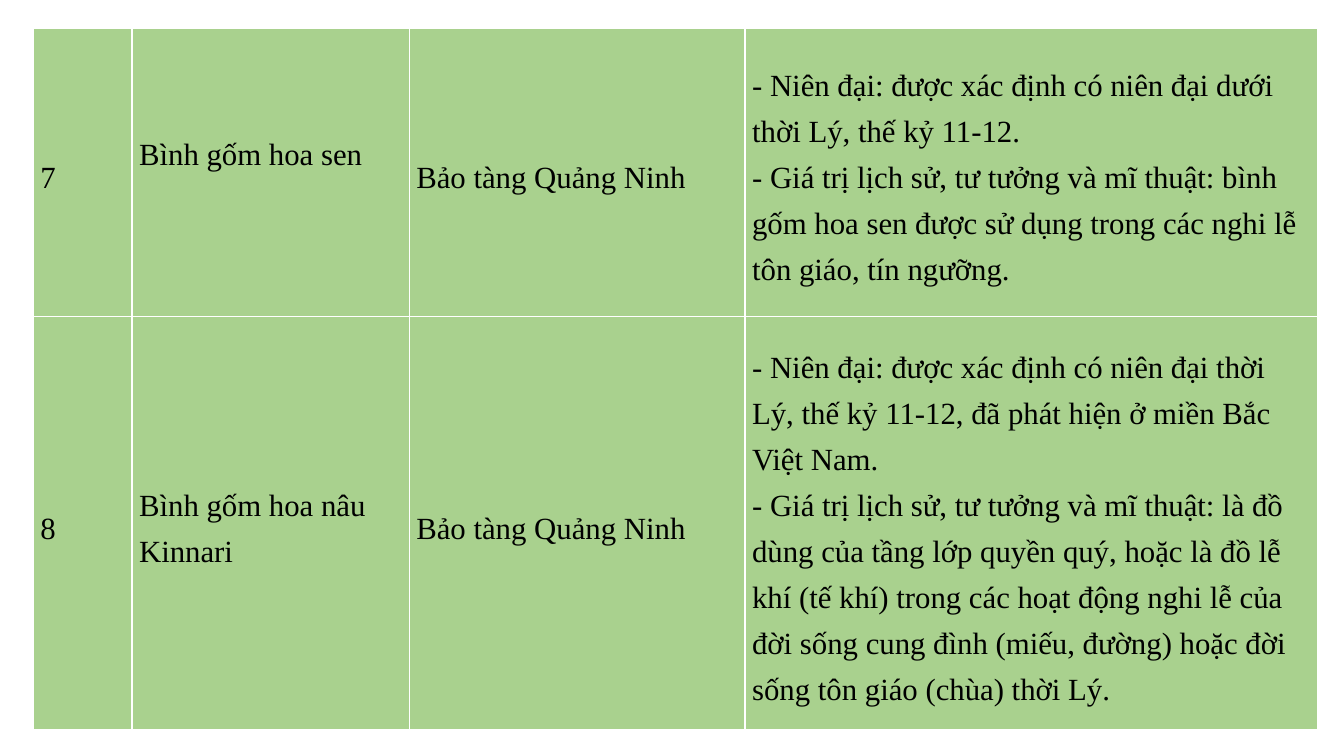
"""Build a slide with a table of two ceramic vases, their museum and their value."""
from dataclasses import dataclass

import pptx
import pptx.dml.color
import pptx.enum.text
import pptx.oxml
import pptx.oxml.ns
import pptx.presentation
import pptx.table
import pptx.util

EMU_PER_PX = 9144


@dataclass(frozen=True)
class Theme:
    font: str = "Times New Roman"
    text: str = "000000"
    cell: str = "A9D18E"
    border: str = "FFFFFF"
    text_size: int = 22
    border_width: int = 1
    line_spacing: float = 1.35


@dataclass(frozen=True)
class CellText:
    text: str
    bottom: int = 0


@dataclass(frozen=True)
class Artifact:
    height: int
    number: CellText
    name: CellText
    museum: CellText
    value: CellText

    def cells(self) -> tuple[CellText, ...]:
        return self.number, self.name, self.museum, self.value


THEME = Theme()
SLIDE_WIDTH, SLIDE_HEIGHT = 1333, 750
TABLE_LEFT, TABLE_TOP = 33, 28
COLUMN_WIDTHS = (98, 275, 333, 568)
SIDE_MARGIN = 7
MUSEUM = CellText("Bảo tàng Quảng Ninh")

ARTIFACTS = (
    Artifact(
        286,
        CellText("7"),
        CellText("Bình gốm hoa sen", bottom=45),
        MUSEUM,
        CellText(
            "- Niên đại: được xác định có niên đại dưới thời Lý, thế kỷ 11-12.\n"
            "- Giá trị lịch sử, tư tưởng và mĩ thuật: bình gốm hoa sen được sử dụng "
            "trong các nghi lễ tôn giáo, tín ngưỡng."
        ),
    ),
    Artifact(
        410,
        CellText("8"),
        CellText("Bình gốm hoa nâu Kinnari"),
        MUSEUM,
        CellText(
            "- Niên đại: được xác định có niên đại thời Lý, thế kỷ 11-12, "
            "đã phát hiện ở miền Bắc Việt Nam.\n"
            "- Giá trị lịch sử, tư tưởng và mĩ thuật: là đồ dùng của tầng lớp quyền quý, "
            "hoặc là đồ lễ khí (tế khí) trong các hoạt động nghi lễ của đời sống "
            "cung đình (miếu, đường) hoặc đời sống tôn giáo (chùa) thời Lý."
        ),
    ),
)


def px(length: int) -> pptx.util.Emu:
    return pptx.util.Emu(length * EMU_PER_PX)


def write_text(cell: pptx.table._Cell, text: str, *, size: int, color: str, bottom: int) -> None:
    cell.vertical_anchor = pptx.enum.text.MSO_ANCHOR.MIDDLE
    cell.margin_left = cell.margin_right = px(SIDE_MARGIN)
    cell.margin_top, cell.margin_bottom = px(0), px(bottom)
    cell.text_frame.text = text
    for paragraph in cell.text_frame.paragraphs:
        paragraph.line_spacing = THEME.line_spacing
        for run in paragraph.runs:
            run.font.name = THEME.font
            run.font.size = pptx.util.Pt(size)
            run.font.color.rgb = pptx.dml.color.RGBColor.from_string(color)


def paint_cell(cell: pptx.table._Cell, *, fill: str, border: str, width: int) -> None:
    properties = cell._tc.get_or_add_tcPr()
    namespace = pptx.oxml.ns.nsdecls("a")
    for side in "LRTB":
        properties.append(pptx.oxml.parse_xml(
            f'<a:ln{side} {namespace} w="{pptx.util.Pt(width)}"><a:solidFill>'
            f'<a:srgbClr val="{border}"/></a:solidFill></a:ln{side}>'
        ))
    cell.fill.solid()
    cell.fill.fore_color.rgb = pptx.dml.color.RGBColor.from_string(fill)


def add_artifact_table(presentation: pptx.presentation.Presentation) -> None:
    slide = presentation.slides.add_slide(presentation.slide_layouts[6])
    table = slide.shapes.add_table(
        len(ARTIFACTS), len(COLUMN_WIDTHS), px(TABLE_LEFT), px(TABLE_TOP),
        px(sum(COLUMN_WIDTHS)), px(sum(artifact.height for artifact in ARTIFACTS)),
    ).table
    table.first_row = table.horz_banding = False
    for column, width in zip(table.columns, COLUMN_WIDTHS):
        column.width = px(width)
    for row, artifact in zip(table.rows, ARTIFACTS):
        row.height = px(artifact.height)
        for cell, content in zip(row.cells, artifact.cells()):
            paint_cell(cell, fill=THEME.cell, border=THEME.border, width=THEME.border_width)
            write_text(cell, content.text, size=THEME.text_size, color=THEME.text,
                       bottom=content.bottom)


def main() -> None:
    presentation = pptx.Presentation()
    presentation.slide_width = px(SLIDE_WIDTH)
    presentation.slide_height = px(SLIDE_HEIGHT)
    add_artifact_table(presentation)
    presentation.save("out.pptx")


if __name__ == "__main__":
    main()
